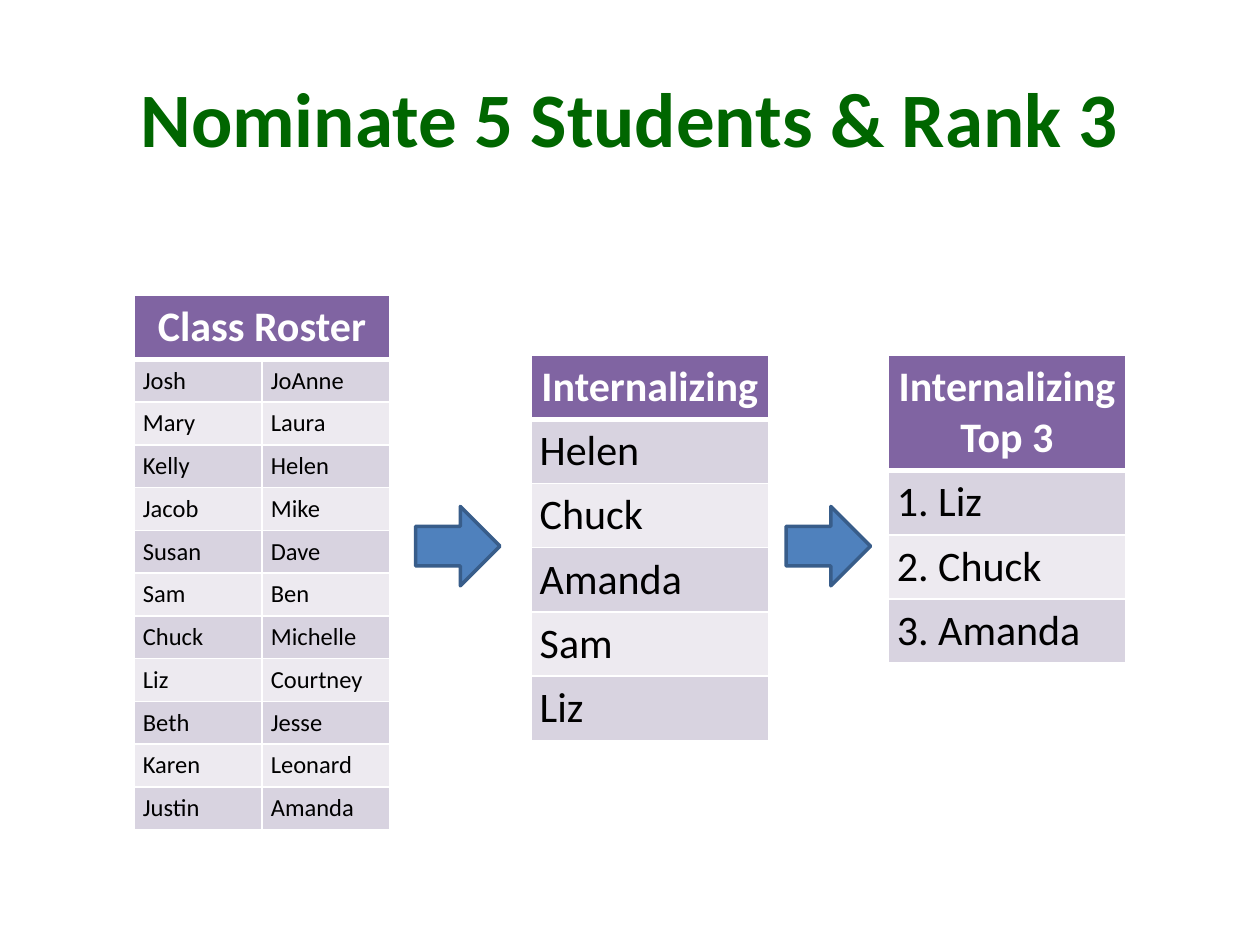
"""Build the slide that narrows a class roster to three ranked students."""
from typing import NamedTuple

from lxml import etree
from pptx import Presentation
from pptx.dml.color import RGBColor
from pptx.enum import shapes, text
from pptx.oxml import ns
from pptx.util import Cm, Pt

GREEN = RGBColor(0x00, 0x66, 0x00)
PURPLE = RGBColor(0x80, 0x64, 0xA2)
LILAC = RGBColor(0xD8, 0xD3, 0xE0)
PALE_LILAC = RGBColor(0xED, 0xEA, 0xF0)
BLUE = RGBColor(0x4F, 0x81, 0xBD)
DARK_BLUE = RGBColor(0x38, 0x5D, 0x8A)
WHITE = RGBColor(0xFF, 0xFF, 0xFF)
BLACK = RGBColor(0x00, 0x00, 0x00)


class NameList(NamedTuple):
    heading: str
    rows: list[tuple[str, ...]]
    left: float
    top: float
    width: float
    height: float
    heading_height: float
    row_height: float
    size: int = 24


ROSTER = [
    ("Josh", "JoAnne"), ("Mary", "Laura"), ("Kelly", "Helen"),
    ("Jacob", "Mike"), ("Susan", "Dave"), ("Sam", "Ben"),
    ("Chuck", "Michelle"), ("Liz", "Courtney"), ("Beth", "Jesse"),
    ("Karen", "Leonard"), ("Justin", "Amanda"),
]
NOMINEES = [("Helen",), ("Chuck",), ("Amanda",), ("Sam",), ("Liz",)]
TOP_THREE = [("1. Liz",), ("2. Chuck",), ("3. Amanda",)]

NAME_LISTS = [
    NameList("Internalizing", NOMINEES, 10.7, 7.16, 4.8, 7.62, 1.04, 1.04),
    NameList("Class Roster", ROSTER, 2.7, 5.95, 5.16, 10.6, 1.27, 0.85, 14),
    NameList("Internalizing Top 3", TOP_THREE, 17.9, 7.16, 4.8, 6.1, 2.29, 1.27),
]
ARROW_LEFTS = [8.38, 15.85]


def write(frame, words: str, *, size: int, color: RGBColor,
          bold: bool = False, align=text.PP_ALIGN.LEFT) -> None:
    """Put one formatted paragraph in a text frame."""
    paragraph = frame.paragraphs[0]
    paragraph.alignment = align
    run = paragraph.add_run()
    run.text = words
    run.font.name = "Calibri"
    run.font.size = Pt(size)
    run.font.bold = bold
    run.font.color.rgb = color


def format_cell(cell, row: int) -> None:
    """Give a cell its margins, white borders and banded fill."""
    cell.margin_left = cell.margin_right = Cm(0.18)
    cell.margin_top = cell.margin_bottom = Cm(0.13)
    widths = {"lnL": 1, "lnR": 1, "lnT": 3 if row == 1 else 1, "lnB": 3 if row == 0 else 1}
    properties = cell._tc.get_or_add_tcPr()
    for side, width in widths.items():
        border = etree.SubElement(properties, ns.qn(f"a:{side}"), w=str(Pt(width)))
        fill = etree.SubElement(border, ns.qn("a:solidFill"))
        etree.SubElement(fill, ns.qn("a:srgbClr"), val=str(WHITE))
    cell.fill.solid()
    band = LILAC if row % 2 else PALE_LILAC
    cell.fill.fore_color.rgb = band if row else PURPLE


def draw_list(slide, names: NameList) -> None:
    """Draw a table of names under a heading."""
    columns = len(names.rows[0])
    graphic = slide.shapes.add_table(
        len(names.rows) + 1, columns,
        Cm(names.left), Cm(names.top), Cm(names.width), Cm(names.height))
    table = graphic.table
    for index, row in enumerate(table.rows):
        row.height = Cm(names.row_height if index else names.heading_height)
        for cell in row.cells:
            format_cell(cell, index)
    graphic.height = Cm(names.height)
    heading = table.cell(0, 0)
    if columns > 1:
        heading.merge(table.cell(0, columns - 1))
    write(heading.text_frame, names.heading, size=24, color=WHITE, bold=True,
          align=text.PP_ALIGN.CENTER)
    for index, students in enumerate(names.rows, start=1):
        for column, student in enumerate(students):
            write(table.cell(index, column).text_frame, student,
                  size=names.size, color=BLACK)


def draw_arrow(slide, left: float) -> None:
    """Draw an arrow between two lists."""
    arrow = slide.shapes.add_shape(
        shapes.MSO_SHAPE.RIGHT_ARROW, Cm(left), Cm(10.21), Cm(1.7), Cm(1.6))
    arrow.shadow.inherit = False
    arrow.fill.solid()
    arrow.fill.fore_color.rgb = BLUE
    arrow.line.color.rgb = DARK_BLUE
    arrow.line.width = Pt(2)


def main() -> None:
    """Build and save the presentation."""
    presentation = Presentation()
    presentation.slide_width, presentation.slide_height = Cm(25.4), Cm(19.05)
    slide = presentation.slides.add_slide(presentation.slide_layouts[5])
    title = slide.shapes.title
    title.left, title.top = Cm(1.27), Cm(0.76)
    title.width, title.height = Cm(22.86), Cm(3.18)
    title.text_frame.vertical_anchor = text.MSO_ANCHOR.MIDDLE
    write(title.text_frame, "Nominate 5 Students & Rank 3", size=44,
          color=GREEN, bold=True, align=text.PP_ALIGN.CENTER)
    for names in NAME_LISTS:
        draw_list(slide, names)
    for left in ARROW_LEFTS:
        draw_arrow(slide, left)
    presentation.save("out.pptx")


if __name__ == "__main__":
    main()
